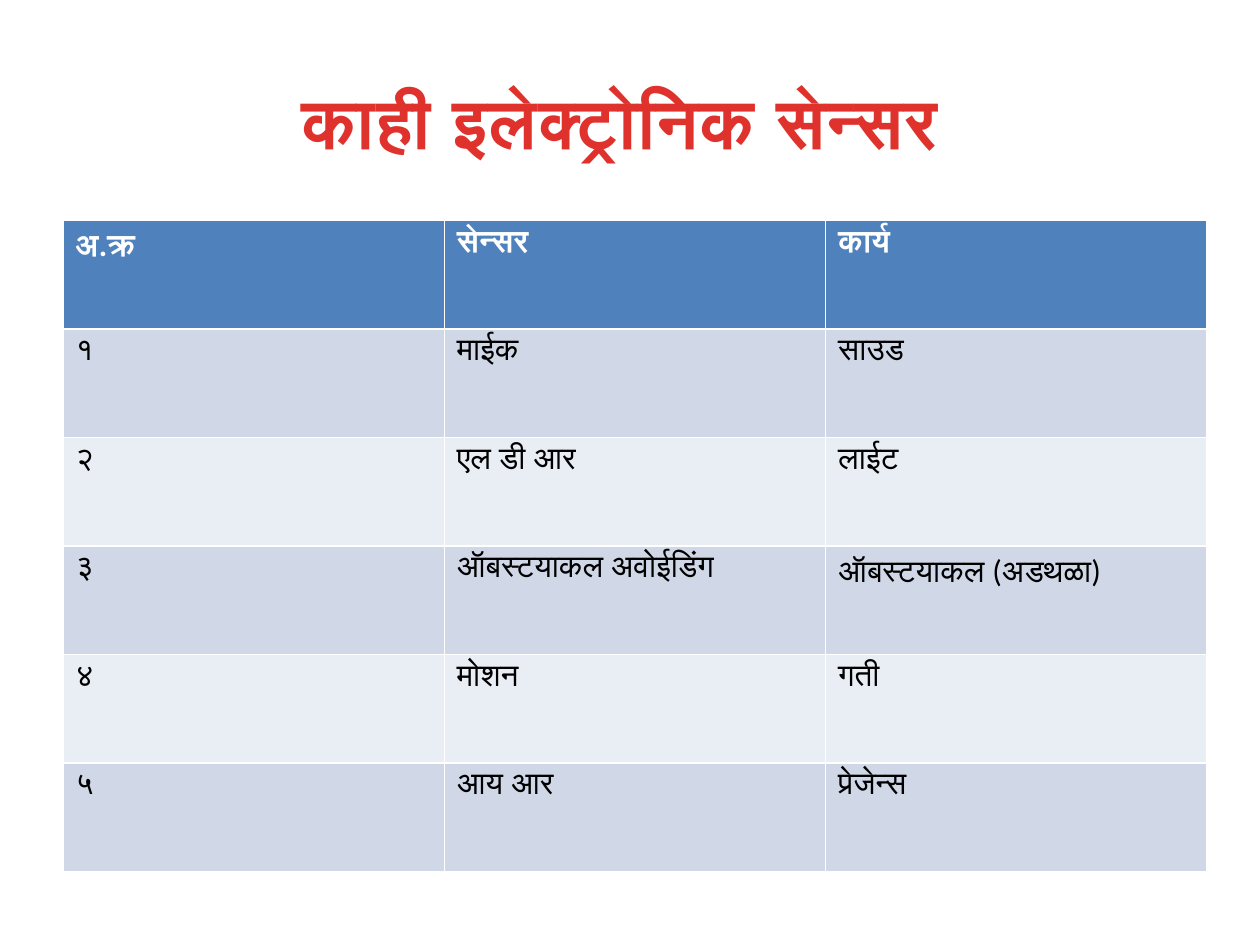
"""Build a slide with a table of electronic sensors and their functions."""
from pptx import Presentation
from pptx.dml.color import RGBColor
from pptx.enum.text import MSO_ANCHOR, PP_ALIGN
from pptx.util import Inches, Pt

COLORS = {"title": "E0322D", "head": "4F81BD", "odd": "D0D8E8",
          "even": "E9EDF4", "white": "FFFFFF", "black": "000000"}
ROWS = [
    ("अ.क्र", "सेन्सर", "कार्य"),
    ("१", "माईक", "साउड"),
    ("२", "एल डी आर", "लाईट"),
    ("३", "ऑबस्टयाकल अवोईडिंग", "ऑबस्टयाकल (अडथळा)"),
    ("४", "मोशन", "गती"),
    ("५", "आय आर", "प्रेजेन्स"),
]


def style(para, face, size, color, bold):
    font = para.font
    font.name, font.size, font.bold = face, Pt(size), bold
    font.color.rgb = RGBColor.from_string(COLORS[color])


deck = Presentation()
deck.slide_width, deck.slide_height = Inches(10), Inches(7.5)
slide = deck.slides.add_slide(deck.slide_layouts[5])

title = slide.shapes.title
title.left, title.top = Inches(0.5), Inches(0.33)
title.width, title.height = Inches(9), Inches(1.25)
title.text_frame.text = "काही इलेक्ट्रोनिक सेन्सर "
title.text_frame.vertical_anchor = MSO_ANCHOR.MIDDLE
head = title.text_frame.paragraphs[0]
head.alignment = PP_ALIGN.CENTER
style(head, "Arial", 40, "title", True)
head.runs[0].font._element.set("spc", "50")

table = slide.shapes.add_table(
    len(ROWS), len(ROWS[0]), Inches(0.5), Inches(1.75), Inches(9.08), Inches(5.17)).table
for r, row in enumerate(ROWS):
    fill = "head" if r == 0 else "odd" if r % 2 else "even"
    for c, text in enumerate(row):
        cell = table.cell(r, c)
        cell.text = text
        cell.fill.solid()
        cell.fill.fore_color.rgb = RGBColor.from_string(COLORS[fill])
        style(cell.text_frame.paragraphs[0], "Calibri", 18,
              "black" if r else "white", r == 0)

deck.save("out.pptx")
